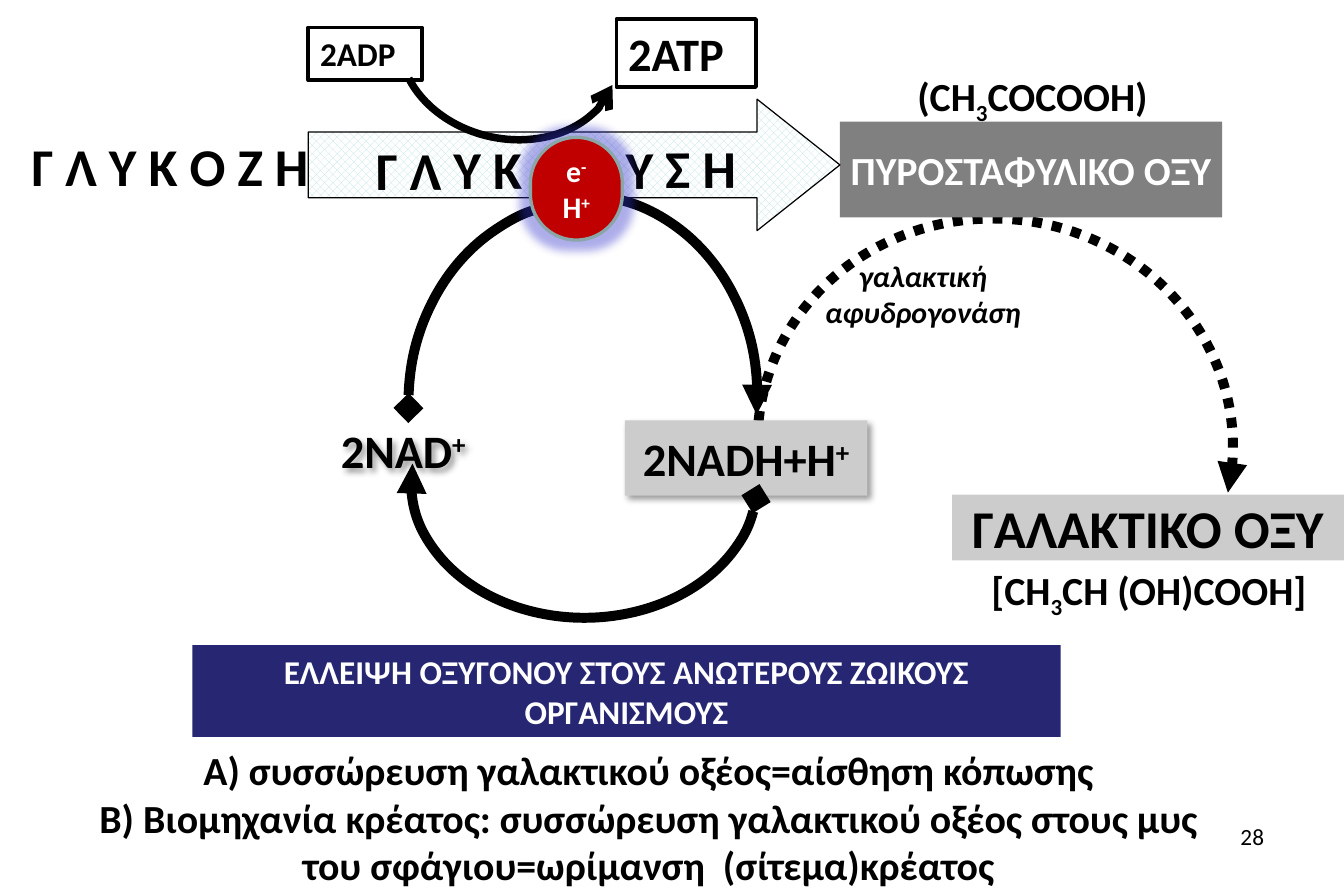
import pptx
import pptx.util
import pptx.dml.color
import pptx.enum.dml
import pptx.enum.shapes
import pptx.enum.text
import pptx.oxml
import pptx.oxml.ns

Pt = pptx.util.Pt
SHAPE = pptx.enum.shapes.MSO_SHAPE
ALIGN = pptx.enum.text.PP_ALIGN
MIDDLE = pptx.enum.text.MSO_ANCHOR.MIDDLE
GROW = pptx.enum.text.MSO_AUTO_SIZE.SHAPE_TO_FIT_TEXT
CENTERED = {"vertical_anchor": MIDDLE, "word_wrap": False}
GROWING = {"word_wrap": True, "auto_size": GROW}
TIGHT = {"word_wrap": False, "auto_size": GROW}
NS = 'xmlns:a="http://schemas.openxmlformats.org/drawingml/2006/main"'
SHADOW = (f'<a:outerShdw {NS} blurRad="50800" dist="38100" dir="2700000" algn="tl" rotWithShape="0">'
          '<a:srgbClr val="000000"><a:alpha val="40000"/></a:srgbClr></a:outerShdw>')
GLOW = (f'<a:glow {NS} rad="139700"><a:srgbClr val="3333CC">'
        '<a:alpha val="40000"/></a:srgbClr></a:glow>')


def rgb(value):
    """Turn a hex string into a colour."""
    return pptx.dml.color.RGBColor.from_string(value)


def apply(target, values):
    """Set each attribute named in values on target."""
    for name, value in values.items():
        setattr(target, name, value)


def add_effect(sp, xml):
    """Give a shape one visual effect."""
    sp.shadow.inherit = False
    effects = sp._element.spPr.find(pptx.oxml.ns.qn("a:effectLst"))
    effects.append(pptx.oxml.parse_xml(xml))


def add_shape(slide, kind, box, fill=None, line=None, width=1):
    """Add a preset shape with plain fill and outline."""
    sp = slide.shapes.add_shape(kind, *map(Pt, box))
    sp.shadow.inherit = False
    if fill:
        sp.fill.solid()
        sp.fill.fore_color.rgb = rgb(fill)
    else:
        sp.fill.background()
    if line:
        sp.line.color.rgb = rgb(line)
        sp.line.width = Pt(width)
    else:
        sp.line.fill.background()
    return sp


def write(sp, text, size, frame, color="000000", align=ALIGN.CENTER, bold=True, italic=False):
    """Write paragraphs; a piece led by ^ or _ is raised or lowered."""
    tf = sp.text_frame
    apply(tf, frame)
    font = {"name": "Calibri", "size": Pt(size), "bold": bold, "italic": italic}
    for i, line in enumerate(text.split("\n")):
        p = tf.add_paragraph() if i else tf.paragraphs[0]
        p.alignment = align
        for piece in line.split("|"):
            baseline = {"^": "30000", "_": "-25000"}.get(piece[0])
            r = p.add_run()
            r.text = piece[1:] if baseline else piece
            apply(r.font, font)
            r.font.color.rgb = rgb(color)
            if baseline:
                r._r.get_or_add_rPr().set("baseline", baseline)
    return sp


def label(slide, box, text, size, frame, **style):
    """Add a text box."""
    return write(slide.shapes.add_textbox(*map(Pt, box)), text, size, frame, **style)


def panel(slide, box, fill, text, size, frame, **style):
    """Add a filled rectangle with text."""
    return write(add_shape(slide, SHAPE.RECTANGLE, box, fill), text, size, frame, **style)


def arc(slide, box, start, end, rotation=0, width=6, head="diamond", tail="triangle", dash=None):
    """Add an arc with line ends."""
    sp = add_shape(slide, SHAPE.ARC, box, None, "000000", width)
    sp.adjustments[0], sp.adjustments[1] = start, end
    sp.rotation = rotation
    if dash:
        sp.line.dash_style = dash
    ln = sp.line._get_or_add_ln()
    for tag, kind in (("headEnd", head), ("tailEnd", tail)):
        if kind:
            ln.append(pptx.oxml.parse_xml(f'<a:{tag} {NS} type="{kind}"/>'))


def lactate(slide, x, y):
    """Draw the path from pyruvic to lactic acid."""
    arc(slide, (x + 0.5, y + 92.2, 286.6, 272.2), 108, 3.59, 5.7, head=None,
        dash=pptx.enum.dml.MSO_LINE.ROUND_DOT)
    panel(slide, (x + 117.8, y + 258.5, 236.2, 39.6), "CCCCCC", "ΓΑΛΑΚΤΙΚΟ ΟΞΥ", 32, CENTERED)
    panel(slide, (x + 50.2, y + 33.8, 230.4, 57.6), "808080", "ΠΥΡΟΣΤΑΦΥΛΙΚΟ ΟΞΥ", 24, CENTERED,
          color="FFFFFF")
    label(slide, (x + 33.6, y + 112.3, 133.2, 51.1), "γαλακτική\nαφυδρογονάση", 18, TIGHT,
          italic=True)
    label(slide, (x + 89.8, y, 156.2, 36), "(CH|_3|COCOOH)", 24, TIGHT, align=ALIGN.LEFT)
    label(slide, (x + 134.4, y + 298.1, 208.1, 36), "[CH|_3|CH (OH)COOH]", 24, TIGHT,
          align=ALIGN.LEFT)


def glycolysis(slide, x, y):
    """Draw glucose and the glycolysis arrow."""
    sp = add_shape(slide, SHAPE.RIGHT_ARROW, (x + 185.8, y, 320.4, 79.2), None, "000000", 0.75)
    sp.adjustments[1] = 0.63
    sp.fill.patterned()
    sp.fill.pattern = pptx.enum.dml.MSO_PATTERN.PERCENT_50
    sp.fill.fore_color.rgb = rgb("BBE0E3")
    sp.fill.back_color.rgb = rgb("FFFFFF")
    label(slide, (x, y + 13.6, 205.2, 52.6), "Γ Λ Υ Κ Ο Ζ Η", 32, CENTERED)
    sp = label(slide, (x + 219.6, y + 18.7, 286.6, 45.4), "Γ Λ Υ Κ Ο Λ Υ Σ Η", 32, GROWING,
               align=ALIGN.LEFT)
    sp.rotation = 359.7


def energy(slide, x, y):
    """Draw the ADP to ATP turn."""
    arc(slide, (x + 54.7, y - 32.4, 131.8, 104.4), 111.02, 199.51, 192.6, 4.5, "arrow", None)
    for box, text, size in (((x, y + 5.1, 68.4, 31.7), "2ADP", 20),
                            ((x + 185.7, y, 84.2, 41), "2ATP", 28)):
        sp = add_shape(slide, SHAPE.RECTANGLE, box, None, "000000", 2.25)
        write(sp, text, size, {**GROWING, "vertical_anchor": pptx.enum.text.MSO_ANCHOR.TOP},
              align=ALIGN.LEFT)


def carrier_cycle(slide, x, y):
    """Draw the NAD and NADH cycle."""
    nad = label(slide, (x, y + 123.8, 126, 58.3), "2NAD|^+", 28, CENTERED)
    nadh = panel(slide, (x + 196.6, y + 135.3, 146.2, 45.4), "CCCCCC", "2NADH+H|^+", 28, CENTERED)
    for sp in (nad, nadh):
        add_effect(sp, SHADOW)
    arc(slide, (x + 67.7, y + 90, 208.8, 164.2), 111.41, 3.59, 180)
    arc(slide, (x + 67.7, y, 208.8, 241.9), 161.47, 3.59)
    arc(slide, (x + 66.2, y + 4.3, 208.8, 241.9), 107.14, 161.99)


def conclusion(slide, x, y):
    """Place the banner, its two consequences and the slide number."""
    panel(slide, (x + 82.1, y, 523.4, 55.4), "262673",
          "ΕΛΛΕΙΨΗ ΟΞΥΓΟΝΟΥ ΣΤΟΥΣ ΑΝΩΤΕΡΟΥΣ ΖΩΙΚΟΥΣ ΟΡΓΑΝΙΣΜΟΥΣ", 20, GROWING, color="FFFFFF")
    label(slide, (x + 546.5, y + 103, 188.6, 37.4), "28", 14, {"word_wrap": True},
          align=ALIGN.RIGHT, bold=False)
    label(slide, (x, y + 56.9, 714.2, 94.3),
          "Α) συσσώρευση γαλακτικού οξέος=αίσθηση κόπωσης\n"
          "Β) Βιομηχανία κρέατος: συσσώρευση γαλακτικού οξέος στους μυς "
          "του σφάγιου=ωρίμανση  (σίτεμα)κρέατος", 24, GROWING)


def electron(slide, x, y):
    """Draw the glowing electron and proton badge."""
    sp = add_shape(slide, SHAPE.ROUNDED_RECTANGLE, (x, y, 55.4, 61.9), "C00000", "8AA6A8", 2)
    sp.adjustments[0] = 0.5
    add_effect(sp, GLOW)
    write(sp, "e|^-\nH|^+", 18, {"vertical_anchor": MIDDLE, "word_wrap": True}, color="FFFFFF")


def main():
    """Build and save the slide."""
    prs = pptx.Presentation()
    apply(prs, {"slide_width": Pt(810), "slide_height": Pt(540)})
    slide = prs.slides.add_slide(prs.slide_layouts[6])
    lactate(slide, 456, 39.6)
    glycolysis(slide, 0, 59.8)
    carrier_cycle(slide, 180, 118.1)
    energy(slide, 185.8, 11.5)
    conclusion(slide, 33.8, 388.8)
    electron(slide, 319.7, 82.8)
    prs.save("out.pptx")


if __name__ == "__main__":
    main()
